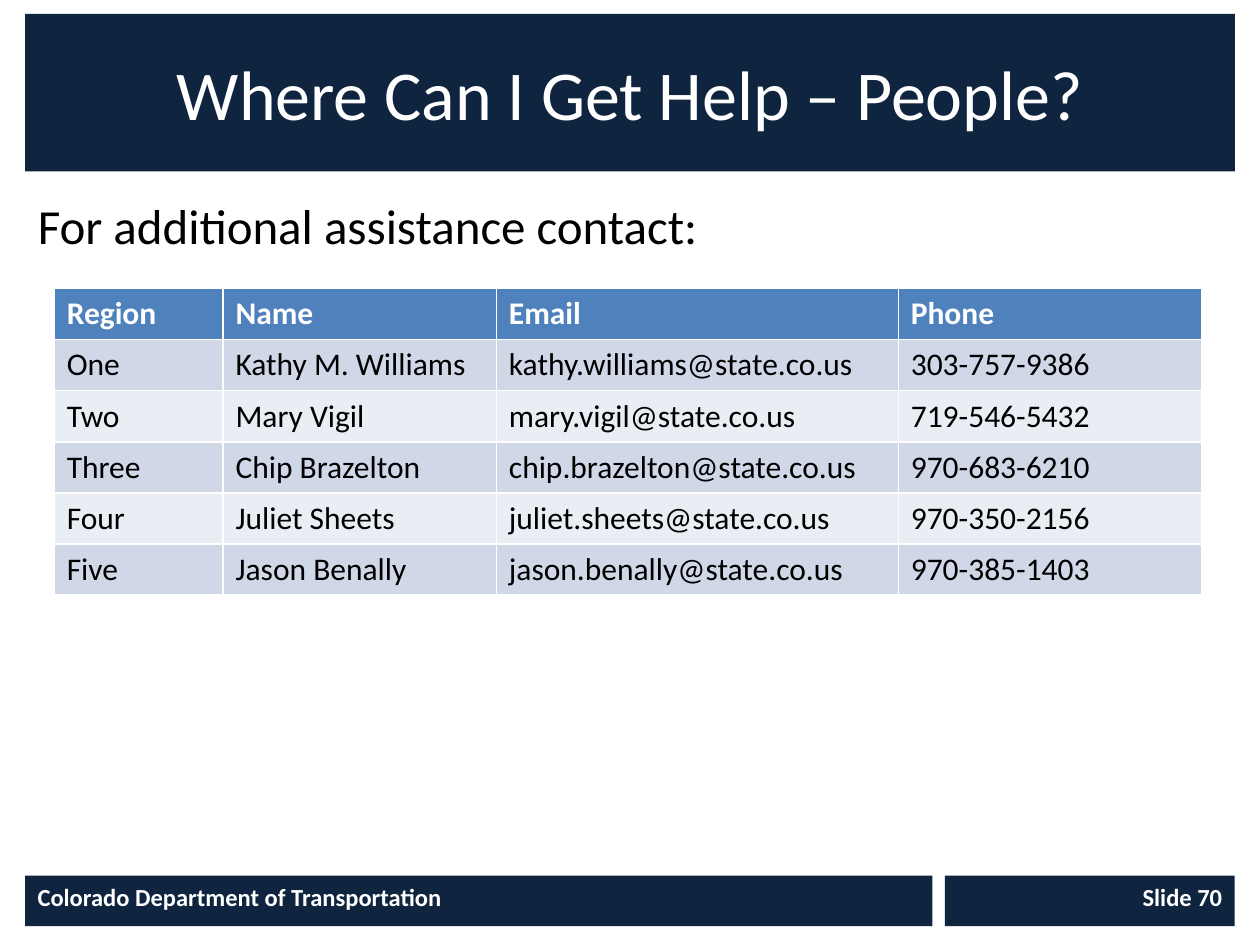
from pptx import Presentation
from pptx.dml.color import RGBColor
from pptx.enum.shapes import MSO_SHAPE as Shape
from pptx.enum.text import MSO_ANCHOR as Anchor, MSO_AUTO_SIZE as AutoSize, PP_ALIGN as Align
from pptx.oxml.xmlchemy import OxmlElement
from pptx.util import Inches, Pt

NAVY = RGBColor(0x0F, 0x24, 0x3E)
BLUE = RGBColor(0x4F, 0x81, 0xBD)
BAND_DARK = RGBColor(0xD0, 0xD8, 0xE8)
BAND_LIGHT = RGBColor(0xE9, 0xED, 0xF4)
WHITE = RGBColor(0xFF, 0xFF, 0xFF)
BLACK = RGBColor(0, 0, 0)

CONTACTS = [
    ("Region", "Name", "Email", "Phone"),
    ("One", "Kathy M. Williams", "kathy.williams@state.co.us", "303-757-9386"),
    ("Two", "Mary Vigil", "mary.vigil@state.co.us", "719-546-5432"),
    ("Three", "Chip Brazelton", "chip.brazelton@state.co.us", "970-683-6210"),
    ("Four", "Juliet Sheets", "juliet.sheets@state.co.us", "970-350-2156"),
    ("Five", "Jason Benally", "jason.benally@state.co.us", "970-385-1403"),
]


class SlideBuilder:
    """Places styled elements on a slide with a grid of 100 columns by 75 rows."""

    font = "Calibri"
    unit = Inches(0.1)

    def __init__(self, deck):
        deck.slide_width, deck.slide_height = 100 * self.unit, 75 * self.unit
        self.slide = deck.slides.add_slide(deck.slide_layouts[1])

    def grid(self, *cells):
        return [round(cell * self.unit) for cell in cells]

    def place(self, element, *cells):
        element.left, element.top, element.width, element.height = self.grid(*cells)

    def add_text(self, frame, text, size, color, bold=False, align=Align.LEFT):
        paragraph = frame.paragraphs[0]
        paragraph.alignment = align
        run = paragraph.add_run()
        run.text = text
        run.font.name, run.font.size, run.font.bold = self.font, Pt(size), bold
        run.font.color.rgb = color

    def title(self, text, *cells):
        heading = self.slide.shapes.title
        self.place(heading, *cells)
        heading.fill.solid()
        heading.fill.fore_color.rgb = NAVY
        heading.text_frame.auto_size = AutoSize.NONE
        heading.text_frame.vertical_anchor = Anchor.MIDDLE
        self.add_text(heading.text_frame, text, 40, WHITE, align=Align.CENTER)

    def body(self, text, *cells):
        intro = self.slide.placeholders[1]
        self.place(intro, *cells)
        intro.text_frame.auto_size = AutoSize.NONE
        self.add_text(intro.text_frame, text, 28, BLACK)
        properties = intro.text_frame.paragraphs[0]._p.get_or_add_pPr()
        properties.set("marL", "0")
        properties.set("indent", "0")
        properties.append(OxmlElement("a:buNone"))

    def table(self, rows, left, top, widths, row_height):
        area = self.grid(left, top, sum(widths), row_height * len(rows))
        table = self.slide.shapes.add_table(len(rows), len(widths), *area).table
        for column, width in zip(table.columns, self.grid(*widths)):
            column.width = width
        for r, row in enumerate(rows):
            is_header = r == 0
            band = BLUE if is_header else (BAND_LIGHT, BAND_DARK)[r % 2]
            for c, text in enumerate(row):
                cell = table.cell(r, c)
                cell.fill.solid()
                cell.fill.fore_color.rgb = band
                self.add_text(cell.text_frame, text, 18, WHITE if is_header else BLACK, is_header)

    def footer(self, text, left, width, align):
        bar = self.slide.shapes.add_shape(Shape.RECTANGLE, *self.grid(left, 69.5, width, 4))
        bar.shadow.inherit = False
        bar.fill.solid()
        bar.fill.fore_color.rgb = NAVY
        bar.line.fill.background()
        bar.text_frame.vertical_anchor = Anchor.TOP
        self.add_text(bar.text_frame, text, 14, WHITE, True, align)


def main():
    deck = Presentation()
    help_slide = SlideBuilder(deck)
    help_slide.title("Where Can I Get Help – People?", 2, 1.1, 96, 12.5)
    help_slide.body("For additional assistance contact:", 2, 15, 96, 54)
    help_slide.table(CONTACTS, 4.3, 22.9, (13.4, 21.7, 31.9, 24.1), 4.05)
    help_slide.footer("Colorado Department of Transportation", 2, 72, Align.LEFT)
    help_slide.footer("Slide 70", 75, 23, Align.RIGHT)
    deck.save("out.pptx")


if __name__ == "__main__":
    main()
